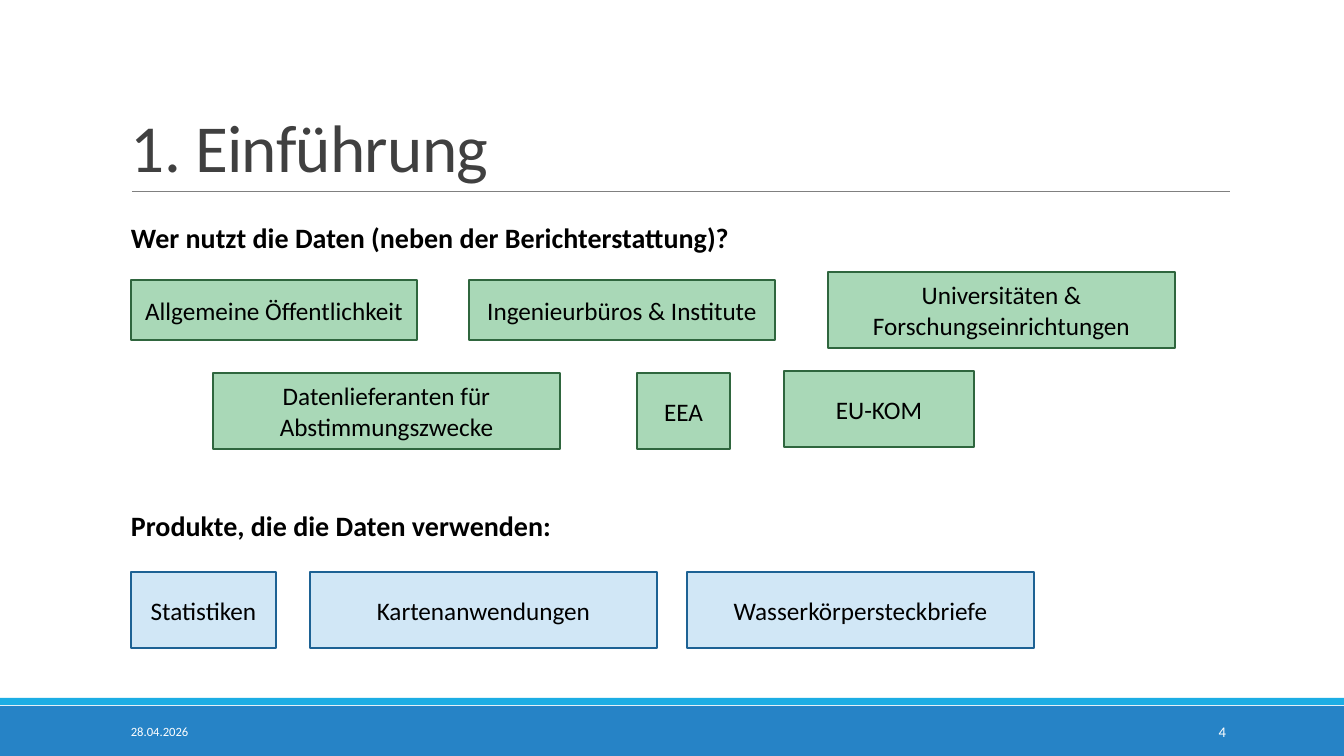
from pptx import Presentation
from pptx.dml.color import RGBColor
from pptx.enum.shapes import MSO_CONNECTOR, MSO_SHAPE
from pptx.enum.text import MSO_ANCHOR, PP_ALIGN
from pptx.oxml.ns import qn
from pptx.util import Pt
from lxml.etree import SubElement

EMU_PER_PX = 914400 / 100.8
HEADING = {"size": Pt(20), "bold": True}
LABEL = {"size": Pt(18)}
USER_COLOURS = ("A9D8B7", "2F663E")
PRODUCT_COLOURS = ("D1E7F6", "1D6294")

USERS = [
    ("Allgemeine Öffentlichkeit", 131, 280, 286, 60),
    ("Ingenieurbüros & Institute", 469, 280, 306, 60),
    ("Universitäten & Forschungseinrichtungen", 828, 272, 347, 76),
    ("Datenlieferanten für Abstimmungszwecke", 213, 373, 347, 76),
    ("EEA", 637, 373, 93, 76),
    ("EU-KOM", 784, 371, 190, 76),
]
PRODUCTS = [
    ("Statistiken", 131, 145),
    ("Kartenanwendungen", 310, 347),
    ("Wasserkörpersteckbriefe", 687, 347),
]


def px(*lengths):
    """Turn pixel lengths into EMU."""
    return [round(length * EMU_PER_PX) for length in lengths]


def colour(hex_value):
    """Turn a hex string into a colour."""
    return RGBColor.from_string(hex_value)


def write(frame, wording, font, ink="000000", align=PP_ALIGN.LEFT,
          anchor=MSO_ANCHOR.TOP, wrap=True):
    """Put one formatted paragraph in a text frame and return it."""
    frame.word_wrap = wrap
    frame.vertical_anchor = anchor
    paragraph = frame.paragraphs[0]
    paragraph.alignment = align
    run = paragraph.add_run()
    run.text = wording
    for key, value in {"name": "Calibri", **font}.items():
        setattr(run.font, key, value)
    run.font.color.rgb = colour(ink)
    return paragraph


def add_text(slide, wording, bounds, font, **options):
    """Add a text box and return its paragraph."""
    frame = slide.shapes.add_textbox(*px(*bounds)).text_frame
    return write(frame, wording, font, **options)


def add_rectangle(slide, bounds, fill, outline=None):
    """Add a flat rectangle, with an outline if a colour is given."""
    rectangle = slide.shapes.add_shape(MSO_SHAPE.RECTANGLE, *px(*bounds))
    rectangle.shadow.inherit = False
    rectangle.fill.solid()
    rectangle.fill.fore_color.rgb = colour(fill)
    if outline:
        rectangle.line.color.rgb = colour(outline)
        rectangle.line.width = Pt(1.25)
    else:
        rectangle.line.fill.background()
    return rectangle


def add_label(slide, wording, bounds, colours):
    """Add an outlined box with a centred label."""
    box = add_rectangle(slide, bounds, *colours)
    write(box.text_frame, wording, LABEL, align=PP_ALIGN.CENTER,
          anchor=MSO_ANCHOR.MIDDLE)


def add_title(slide, wording):
    """Add the slide title and the rule below it."""
    rule = slide.shapes.add_connector(
        MSO_CONNECTOR.STRAIGHT, *px(132, 191, 1230, 191))
    rule.line.color.rgb = colour("808080")
    rule.line.width = Pt(0.5)
    SubElement(rule._element.spPr, qn("a:effectLst"))
    title = add_text(slide, wording, (121, 31, 1109, 160), {"size": Pt(48)},
                     ink="404040", anchor=MSO_ANCHOR.BOTTOM)
    title.line_spacing = 0.85
    title.runs[0]._r.get_or_add_rPr().set("spc", "-50")


def add_footer(slide, date, number):
    """Add the footer bars, the date and the slide number."""
    add_rectangle(slide, (0, 706, 1344, 50), "2683C6")
    add_rectangle(slide, (0, 698, 1344, 7), "1CADE4")
    add_text(slide, date, (121, 712, 272, 40), {"size": Pt(9)},
             ink="FFFFFF", anchor=MSO_ANCHOR.MIDDLE)
    add_text(slide, number, (1092, 712, 144, 40), {"size": Pt(10.5)},
             ink="FFFFFF", align=PP_ALIGN.RIGHT, anchor=MSO_ANCHOR.MIDDLE)


def main():
    """Build and save the slide."""
    deck = Presentation()
    deck.slide_width, deck.slide_height = px(1344, 756)
    slide = deck.slides.add_slide(deck.slide_layouts[6])
    add_footer(slide, "28.04.2026", "4")
    add_title(slide, "1. Einführung")
    add_text(slide, "Wer nutzt die Daten (neben der Berichterstattung)?",
             (121, 216, 1125, 44), HEADING)
    for wording, *bounds in USERS:
        add_label(slide, wording, bounds, USER_COLOURS)
    add_text(slide, "Produkte, die die Daten verwenden:",
             (121, 504, 445, 44), HEADING, wrap=False)
    for wording, left, width in PRODUCTS:
        add_label(slide, wording, (left, 572, width, 76), PRODUCT_COLOURS)
    deck.save("out.pptx")


if __name__ == "__main__":
    main()
